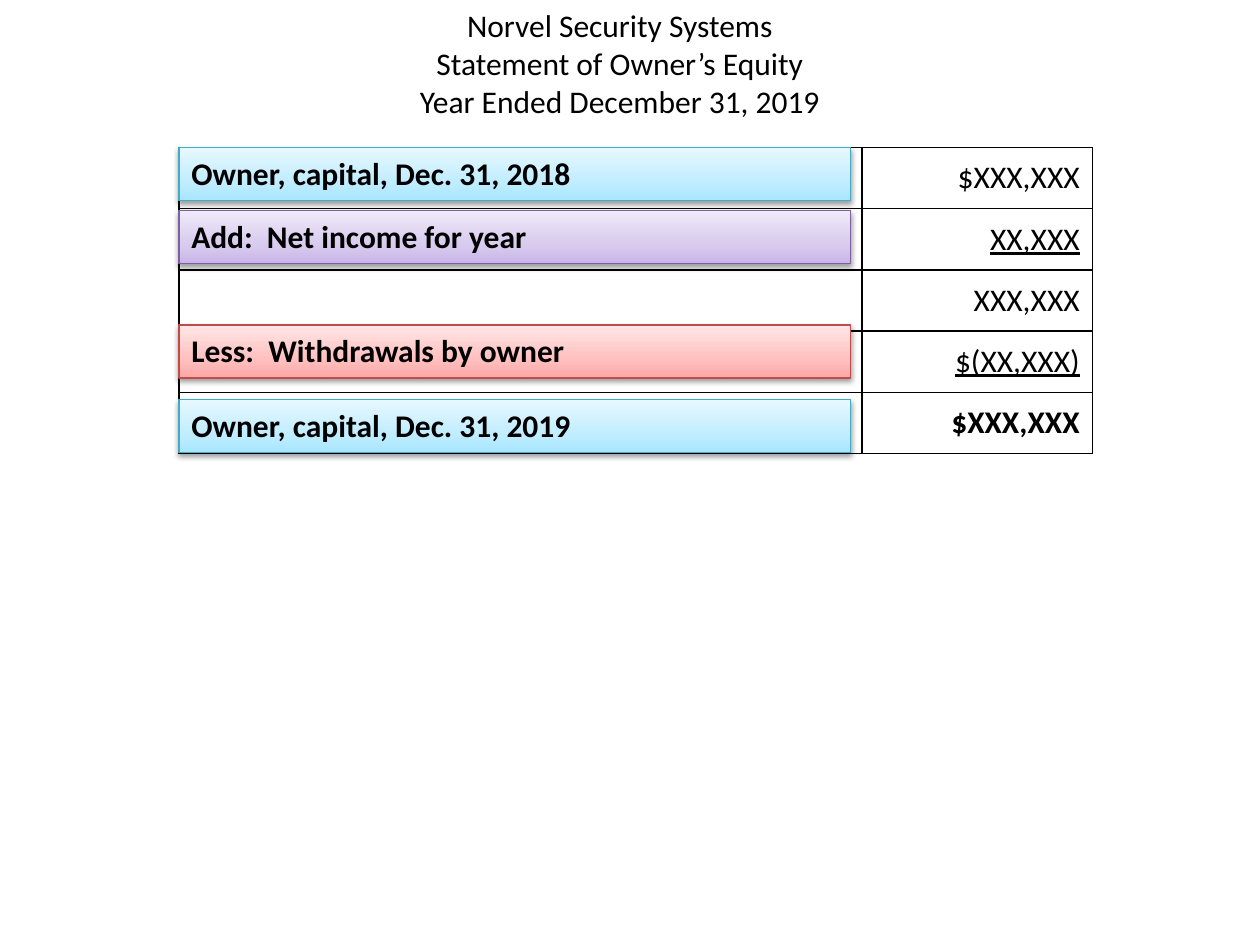
from lxml.etree import SubElement
from pptx import Presentation
from pptx.dml.color import RGBColor
from pptx.enum.shapes import MSO_SHAPE
from pptx.enum.text import MSO_ANCHOR, PP_ALIGN
from pptx.oxml.ns import qn
from pptx.util import Inches, Pt

BLACK = "000000"
TABLE_LEFT, TABLE_TOP = 1.42, 1.17
COLUMN_WIDTHS = (5.42, 1.83)
TABLE_HEIGHT = 2.43
LABEL_WIDTH, LABEL_HEIGHT = 5.33, 0.42

# Line colour, then gradient colours from bottom to top
BLUE = ("46AAC5", ("A7E6FF", "C1EDFF", "E7F8FF"))
PURPLE = ("7D60A0", ("C9B5E8", "D8CBEE", "F0EAF9"))
RED = ("BF4C48", ("FFA6A5", "FFC0BF", "FFE7E7"))
GRADIENT_POSITIONS = (0, 35, 100)

HEADING = ("Norvel Security Systems", "Statement of Owner’s Equity",
           "Year Ended December 31, 2019")

# Amount, underlined, bold
AMOUNTS = (
    ("$XXX,XXX", False, False),
    ("XX,XXX", True, False),
    ("XXX,XXX", False, False),
    ("$(XX,XXX)", True, False),
    ("$XXX,XXX", False, True),
)

# Text, top, colour scheme
LABELS = (
    ("Owner, capital, Dec. 31, 2018", TABLE_TOP, BLUE),
    ("Owner, capital, Dec. 31, 2019", 3.17, BLUE),
    ("Add:  Net income for year", 1.67, PURPLE),
    ("Less:  Withdrawals by owner", 2.58, RED),
)


def color(value):
    return RGBColor.from_string(value)


def add_text(paragraph, text, bold=False, underline=False):
    run = paragraph.add_run()
    run.text = text
    font = run.font
    font.name, font.size = "Calibri", Pt(18)
    font.bold, font.underline = bold, underline
    font.color.rgb = color(BLACK)


def add_xml_color(parent, value):
    return SubElement(parent, qn("a:srgbClr"), val=value)


def add_heading(slide):
    box = slide.shapes.add_textbox(Inches(0.67), 0, Inches(8.5), Inches(1.08))
    box.text_frame.word_wrap = True
    paragraph = box.text_frame.paragraphs[0]
    paragraph.alignment = PP_ALIGN.CENTER
    for index, line in enumerate(HEADING):
        if index:
            paragraph.add_line_break()
        add_text(paragraph, line)


def style_cell(cell):
    properties = cell._tc.get_or_add_tcPr()
    for side in ("lnL", "lnR", "lnT", "lnB"):
        border = SubElement(properties, qn(f"a:{side}"), w=str(Pt(1)))
        add_xml_color(SubElement(border, qn("a:solidFill")), BLACK)
    cell.fill.background()
    cell.vertical_anchor = MSO_ANCHOR.MIDDLE


def add_amount_table(slide):
    frame = slide.shapes.add_table(
        len(AMOUNTS), len(COLUMN_WIDTHS), Inches(TABLE_LEFT), Inches(TABLE_TOP),
        Inches(sum(COLUMN_WIDTHS)), Inches(TABLE_HEIGHT))
    table = frame.table
    table.first_row = table.horz_banding = False
    for column, width in zip(table.columns, COLUMN_WIDTHS):
        column.width = Inches(width)
    for cell in table.iter_cells():
        style_cell(cell)
    for row, (amount, underline, bold) in enumerate(AMOUNTS):
        paragraph = table.cell(row, 1).text_frame.paragraphs[0]
        paragraph.alignment = PP_ALIGN.RIGHT
        add_text(paragraph, amount, bold, underline)


def set_gradient(shape, colors):
    shape.fill.gradient()
    shape.fill.gradient_angle = 90
    stops = shape._element.spPr.find(".//" + qn("a:gsLst"))
    for stop in list(stops):
        stops.remove(stop)
    for position, value in zip(GRADIENT_POSITIONS, colors):
        stop = SubElement(stops, qn("a:gs"), pos=str(position * 1000))
        add_xml_color(stop, value)


def set_shadow(shape):
    shape.shadow.inherit = False
    effects = shape._element.spPr.find(qn("a:effectLst"))
    shadow = SubElement(effects, qn("a:outerShdw"), blurRad=str(Pt(3.1)),
                        dist=str(Pt(1.6)), dir="5400000", rotWithShape="0")
    SubElement(add_xml_color(shadow, BLACK), qn("a:alpha"), val="38000")


def add_label(slide, text, top, scheme):
    line_color, gradient_colors = scheme
    shape = slide.shapes.add_shape(
        MSO_SHAPE.RECTANGLE, Inches(TABLE_LEFT), Inches(top),
        Inches(LABEL_WIDTH), Inches(LABEL_HEIGHT))
    set_gradient(shape, gradient_colors)
    shape.line.color.rgb = color(line_color)
    shape.line.width = Pt(0.75)
    set_shadow(shape)
    frame = shape.text_frame
    frame.word_wrap = True
    frame.vertical_anchor = MSO_ANCHOR.TOP
    paragraph = frame.paragraphs[0]
    paragraph.alignment = PP_ALIGN.LEFT
    add_text(paragraph, text, bold=True)


def main():
    presentation = Presentation()
    presentation.slide_width, presentation.slide_height = Inches(10), Inches(7.5)
    slide = presentation.slides.add_slide(presentation.slide_layouts[6])

    # Statement heading and amounts
    add_heading(slide)
    add_amount_table(slide)

    # Coloured row labels over the first column
    for text, top, scheme in LABELS:
        add_label(slide, text, top, scheme)

    presentation.save("out.pptx")


if __name__ == "__main__":
    main()
